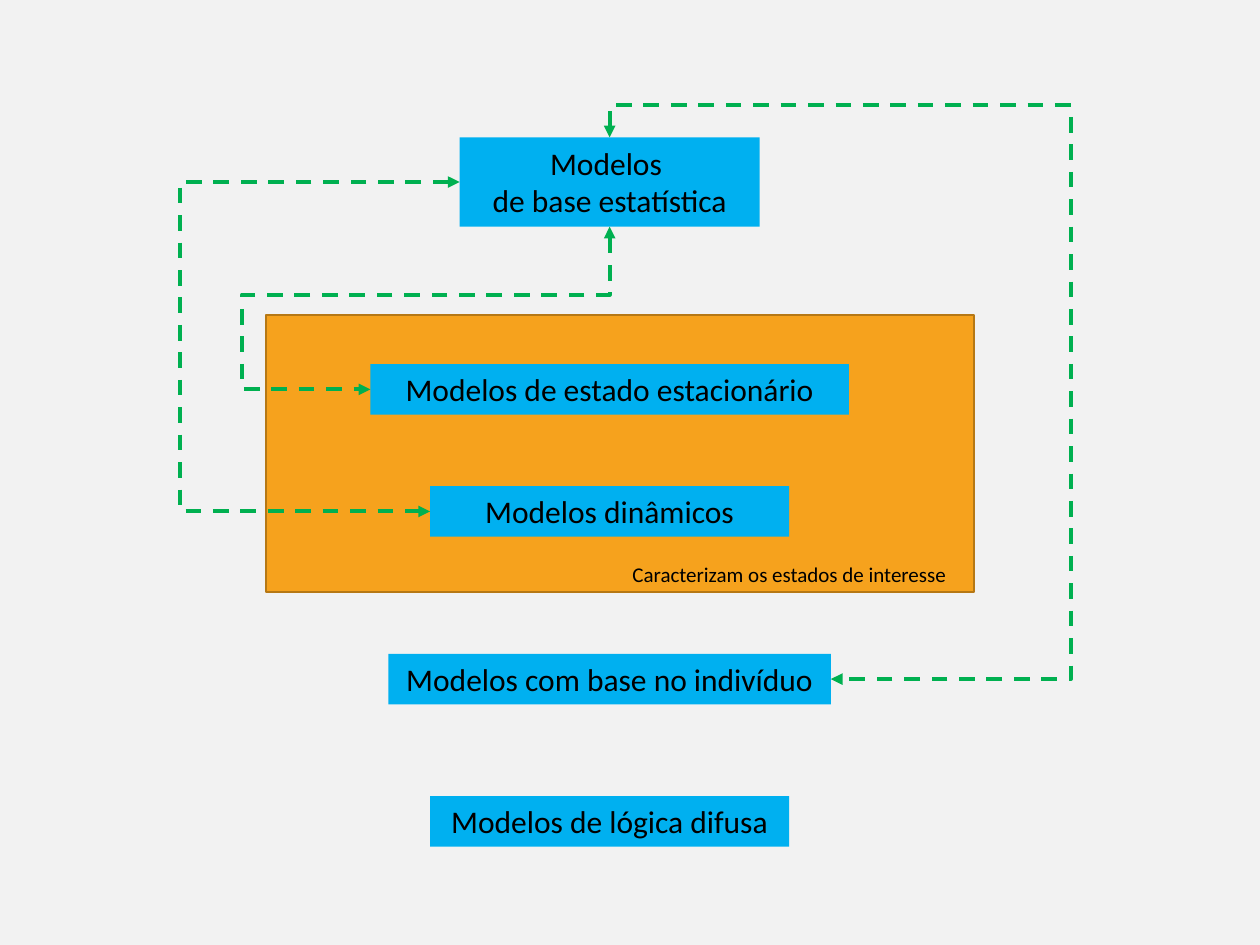
"""Builds the slide relating families of models with dashed feedback links."""
from dataclasses import dataclass

import lxml.etree
import pptx
import pptx.dml.color
import pptx.enum.dml
import pptx.enum.shapes
import pptx.enum.text
import pptx.oxml.ns
import pptx.util

Cm = pptx.util.Cm
Point = tuple[float, float]
AXIS = 12.29
FONT = "Calibri"
BLACK, BLUE, GREEN = "000000", "00B0F0", "00B050"
ORANGE, BROWN, GREY = "F6A21D", "B67815", "F2F2F2"


@dataclass(frozen=True)
class Model:
    lines: tuple[str, ...]
    top: float
    width: float
    height: float = 1.02

    @property
    def left(self) -> float:
        return AXIS - self.width / 2

    @property
    def middle(self) -> float:
        return self.top + self.height / 2

    @property
    def west(self) -> Point:
        return self.left, self.middle

    @property
    def east(self) -> Point:
        return self.left + self.width, self.middle

    @property
    def north(self) -> Point:
        return AXIS, self.top

    @property
    def south(self) -> Point:
        return AXIS, self.top + self.height


@dataclass(frozen=True)
class Link:
    start: Point
    end: Point
    side: float
    level: float | None = None


def paint(color_format, value: str) -> None:
    color_format.rgb = pptx.dml.color.RGBColor.from_string(value)


def add_rect(shapes, left: float, top: float, width: float, height: float, fill: str):
    rect = shapes.add_shape(pptx.enum.shapes.MSO_SHAPE.RECTANGLE,
                            Cm(left), Cm(top), Cm(width), Cm(height))
    rect.shadow.inherit = False
    rect.fill.solid()
    paint(rect.fill.fore_color, fill)
    rect.line.fill.background()
    return rect


def write(frame, lines: tuple[str, ...], size: int, align) -> None:
    frame.word_wrap = True
    frame.auto_size = pptx.enum.text.MSO_AUTO_SIZE.SHAPE_TO_FIT_TEXT
    frame.vertical_anchor = pptx.enum.text.MSO_ANCHOR.TOP
    for index, line in enumerate(lines):
        paragraph = frame.add_paragraph() if index else frame.paragraphs[0]
        paragraph.text = line
        paragraph.alignment = align
        paragraph.font.name = FONT
        paragraph.font.size = pptx.util.Pt(size)
        paint(paragraph.font.color, BLACK)


def add_model(shapes, model: Model) -> None:
    box = add_rect(shapes, model.left, model.top, model.width, model.height, BLUE)
    write(box.text_frame, model.lines, 18, pptx.enum.text.PP_ALIGN.CENTER)


def add_panel(shapes) -> None:
    group = shapes.add_group_shape()
    panel = add_rect(group.shapes, 5.36, 6.35, 14.27, 5.59, ORANGE)
    paint(panel.line.color, BROWN)
    panel.line.width = pptx.util.Pt(1)
    caption = group.shapes.add_textbox(Cm(12.5), Cm(11.2), Cm(11.18), Cm(0.76))
    write(caption.text_frame, ("Caracterizam os estados de interesse",), 12,
          pptx.enum.text.PP_ALIGN.LEFT)


def add_link(shapes, link: Link) -> None:
    """Draw a bent link; one with a level leaves vertically, in a turned frame."""
    (x1, y1), (x2, y2) = link.start, link.end
    turned = link.level is not None
    if turned:
        center_x, center_y = (x1 + x2) / 2, (y1 + y2) / 2
        half_w, half_h = abs(y2 - y1) / 2, abs(x2 - x1) / 2
        frame = (center_x - half_w, center_y - half_h, center_x + half_w, center_y + half_h)
        bends = ((link.level - y1) / (y2 - y1), (link.side - x1) / (x2 - x1))
    else:
        frame = (x1, y1, x2, y2)
        bends = ((link.side - x1) / (x2 - x1),)
    connector = shapes.add_connector(pptx.enum.shapes.MSO_CONNECTOR.ELBOW, *map(Cm, frame))
    paint(connector.line.color, GREEN)
    connector.line.width = pptx.util.Pt(2.25)
    connector.line.dash_style = pptx.enum.dml.MSO_LINE.DASH

    qn = pptx.oxml.ns.qn
    properties = connector.element.spPr
    if turned:
        xfrm = properties.find(qn("a:xfrm"))
        xfrm.set("rot", str((270 if x2 > x1 else 90) * 60000))
        if x2 > x1:
            xfrm.set("flipH", "1")
    geometry = properties.find(qn("a:prstGeom"))
    geometry.set("prst", f"bentConnector{len(bends) + 2}")
    adjustments = geometry.find(qn("a:avLst"))
    for number, bend in enumerate(bends, 1):
        lxml.etree.SubElement(adjustments, qn("a:gd"), name=f"adj{number}",
                              fmla=f"val {round(bend * 100000)}")
    outline = properties.find(qn("a:ln"))
    for tip in ("a:headEnd", "a:tailEnd"):
        lxml.etree.SubElement(outline, qn(tip), type="triangle")
    lxml.etree.SubElement(properties, qn("a:effectLst"))


def main() -> None:
    deck = pptx.Presentation()
    deck.slide_width, deck.slide_height = Cm(25.4), Cm(19.05)
    slide = deck.slides.add_slide(deck.slide_layouts[6])
    slide.background.fill.solid()
    paint(slide.background.fill.fore_color, GREY)

    statistical = Model(("Modelos ", "de base estatística"), 2.77, 6.05, 1.8)
    steady = Model(("Modelos de estado estacionário",), 7.34, 9.65)
    dynamic = Model(("Modelos dinâmicos",), 9.8, 7.24)
    fuzzy = Model(("Modelos de lógica difusa",), 16.05, 7.24)
    individual = Model(("Modelos com base no indivíduo",), 13.18, 8.92)

    add_panel(slide.shapes)
    for model in (statistical, steady, dynamic, fuzzy, individual):
        add_model(slide.shapes, model)
    for link in (
        Link(statistical.west, dynamic.west, side=3.63),
        Link(statistical.south, steady.west, side=4.88, level=5.94),
        Link(statistical.north, individual.east, side=21.59, level=2.13),
    ):
        add_link(slide.shapes, link)
    deck.save("out.pptx")


if __name__ == "__main__":
    main()
